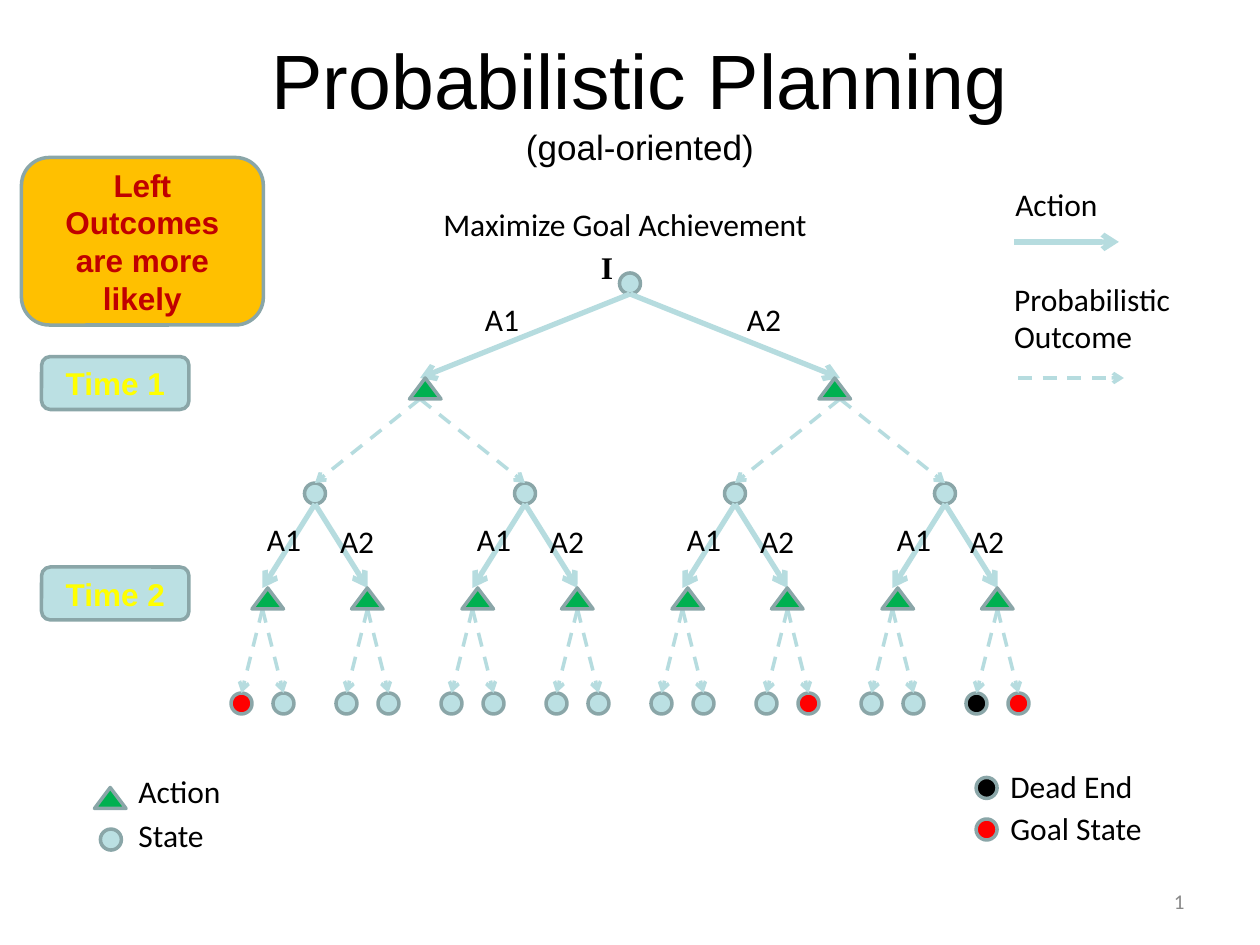
from lxml import etree
from pptx import Presentation
from pptx.dml.color import RGBColor
from pptx.enum.dml import MSO_LINE
from pptx.enum.shapes import MSO_CONNECTOR, MSO_SHAPE
from pptx.enum.text import MSO_ANCHOR, MSO_AUTO_SIZE, PP_ALIGN
from pptx.oxml.ns import qn
from pptx.util import Inches, Pt

STRAIGHT = MSO_CONNECTOR.STRAIGHT
DASH = MSO_LINE.DASH
OVAL, TRIANGLE, ROUNDED = MSO_SHAPE.OVAL, MSO_SHAPE.ISOSCELES_TRIANGLE, MSO_SHAPE.ROUNDED_RECTANGLE
MIDDLE = MSO_ANCHOR.MIDDLE
LEFT, CENTER, RIGHT = PP_ALIGN.LEFT, PP_ALIGN.CENTER, PP_ALIGN.RIGHT
GROW = MSO_AUTO_SIZE.SHAPE_TO_FIT_TEXT

BLACK = RGBColor(0x00, 0x00, 0x00)
GRAY = RGBColor(0x89, 0x89, 0x89)
PALE_TEAL = RGBColor(0xBB, 0xE0, 0xE3)
ARROW_TEAL = RGBColor(0xB6, 0xDC, 0xDF)
OUTLINE = RGBColor(0x8A, 0xA6, 0xA8)
GREEN = RGBColor(0x00, 0xB0, 0x50)
RED = RGBColor(0xFF, 0x00, 0x00)
YELLOW = RGBColor(0xFF, 0xFF, 0x00)
AMBER = RGBColor(0xFF, 0xC0, 0x00)
DARK_RED = RGBColor(0xC0, 0x00, 0x00)

NODE = 1 / 6  # diameter of a state, height of an action
ROOT_X = 5
ROOT_Y, ACTION1_Y, STATE_Y, ACTION2_Y, LEAF_Y = 13 / 6, 3, 23 / 6, 14 / 3, 5.5
LEAF_COLORS = {0: RED, 11: RED, 14: BLACK, 15: RED}


def style_paragraph(para, size, font, color, bold=False, align=LEFT):
    para.alignment = align
    para.font.size = Pt(size)
    para.font.name = font
    para.font.color.rgb = color
    para.font.bold = bold


def add_shape(slide, kind, left, top, width, height, fill):
    shape = slide.shapes.add_shape(kind, Inches(left), Inches(top), Inches(width), Inches(height))
    shape.shadow.inherit = False
    shape.fill.solid()
    shape.fill.fore_color.rgb = fill
    shape.line.color.rgb = OUTLINE
    shape.line.width = Pt(2)
    return shape


def add_state(slide, center_x, top, fill=PALE_TEAL):
    add_shape(slide, OVAL, center_x - NODE / 2, top, NODE, NODE, fill)


def add_action(slide, left, top):
    add_shape(slide, TRIANGLE, left, top, 0.25, NODE, GREEN)


def add_badge(slide, left, top, width, height, text, fill, color):
    badge = add_shape(slide, ROUNDED, left, top, width, height, fill)
    frame = badge.text_frame
    frame.word_wrap = True
    frame.vertical_anchor = MIDDLE
    frame.text = text
    style_paragraph(frame.paragraphs[0], 18, "Arial", color, True, CENTER)


def add_arrow(slide, x1, y1, x2, y2, dashed=False):
    """Solid arrows stand for actions, dashed ones for probabilistic outcomes."""
    arrow = slide.shapes.add_connector(STRAIGHT, Inches(x1), Inches(y1), Inches(x2), Inches(y2))
    arrow.line.color.rgb = ARROW_TEAL
    arrow.line.width = Pt(2 if dashed else 3)
    if dashed:
        arrow.line.dash_style = DASH
    properties = arrow._element.spPr
    etree.SubElement(properties.find(qn("a:ln")), qn("a:tailEnd"), type="arrow")
    etree.SubElement(properties, qn("a:effectLst"))


def add_label(slide, left, top, width, *lines, font="Calibri", bold=False):
    height = 0.41 + 0.32 * (len(lines) - 1)
    box = slide.shapes.add_textbox(Inches(left), Inches(top), Inches(width), Inches(height))
    frame = box.text_frame
    frame.word_wrap = False
    frame.auto_size = GROW
    frame.text = "\n".join(lines)
    for para in frame.paragraphs:
        style_paragraph(para, 18, font, BLACK, bold)


def add_middle_box(slide, left, top, width, height):
    """Adds a wrapping, vertically centred text box and returns its paragraph."""
    box = slide.shapes.add_textbox(Inches(left), Inches(top), Inches(width), Inches(height))
    box.text_frame.word_wrap = True
    box.text_frame.vertical_anchor = MIDDLE
    return box.text_frame.paragraphs[0]


def add_title(slide):
    para = add_middle_box(slide, 0.83, 0.17, 8.5, 1.25)
    style_paragraph(para, 44, "Arial", BLACK, align=CENTER)
    para.add_run().text = "Probabilistic Planning"
    para.add_line_break()
    span = para.add_run()
    span.text = "(goal-oriented)"
    span.font.size = Pt(20)


def add_slide_number(slide):
    para = add_middle_box(slide, 7.17, 6.95, 2.33, 0.4)
    style_paragraph(para, 12, "Calibri", GRAY, align=RIGHT)
    para.add_run().text = "1"


def branch(centers, spread):
    """Splits every node into a left and a right child."""
    return [x + side * spread for x in centers for side in (-1, 1)]


def add_branches(slide, parents, children, top, bottom, dashed):
    for index, child in enumerate(children):
        add_arrow(slide, parents[index // 2], top + NODE, child, bottom, dashed)


def add_tree(slide):
    first_actions = branch([ROOT_X], 5 / 3)
    states = branch(first_actions, 5 / 6)
    second_actions = branch(states, 5 / 12)
    leaves = branch(second_actions, 1 / 6)

    add_state(slide, ROOT_X, ROOT_Y)
    for x in states:
        add_state(slide, x, STATE_Y)
    for index, x in enumerate(leaves):
        add_state(slide, x, LEAF_Y, LEAF_COLORS.get(index, PALE_TEAL))

    add_branches(slide, [ROOT_X], first_actions, ROOT_Y, ACTION1_Y, False)
    add_branches(slide, first_actions, states, ACTION1_Y, STATE_Y, True)
    add_branches(slide, states, second_actions, STATE_Y, ACTION2_Y, False)
    add_branches(slide, second_actions, leaves, ACTION2_Y, LEAF_Y, True)

    for left in (3.25, 6.5):
        add_action(slide, left, ACTION1_Y)
    for x in states:
        add_action(slide, x - 0.5, ACTION2_Y)
        add_action(slide, x + 0.29, ACTION2_Y)

    add_label(slide, 3.42, 1.58, 3.37, "Maximize Goal Achievement")
    add_label(slide, 4.67, 1.92, 0.3, "I", font="Times New Roman", bold=True)
    add_label(slide, 3.75, 2.33, 0.51, "A1")
    add_label(slide, 5.83, 2.33, 0.51, "A2")
    for x in states:
        add_label(slide, x - 0.48, 4.08, 0.51, "A1")
        add_label(slide, x + 0.1, 4.09, 0.51, "A2")


def add_legend(slide):
    add_label(slide, 7.96, 1.42, 0.9, "Action")
    add_arrow(slide, 8.05, 1.92, 8.88, 1.92)
    add_label(slide, 7.95, 2.17, 1.55, "Probabilistic", "Outcome")
    add_arrow(slide, 8.08, 3, 8.92, 3, dashed=True)

    add_action(slide, 0.75, 6.25)
    add_label(slide, 1, 6.08, 0.9, "Action")
    add_state(slide, 0.88, 6.58)
    add_label(slide, 1, 6.43, 0.78, "State")
    add_state(slide, 7.83, 6.17, BLACK)
    add_label(slide, 7.92, 6.04, 1.31, "Dead End")
    add_state(slide, 7.83, 6.5, RED)
    add_label(slide, 7.92, 6.37, 1.38, "Goal State")


def main():
    deck = Presentation()
    deck.slide_width, deck.slide_height = Inches(10), Inches(7.5)
    slide = deck.slides.add_slide(deck.slide_layouts[6])
    add_title(slide)
    add_tree(slide)
    add_legend(slide)
    add_badge(slide, 0.33, 2.83, 1.17, 0.42, "Time 1", PALE_TEAL, YELLOW)
    add_badge(slide, 0.33, 4.5, 1.17, 0.42, "Time 2", PALE_TEAL, YELLOW)
    add_badge(slide, 0.17, 1.25, 1.92, 1.33, "Left Outcomes are more likely", AMBER, DARK_RED)
    add_slide_number(slide)
    deck.save("out.pptx")


if __name__ == "__main__":
    main()
